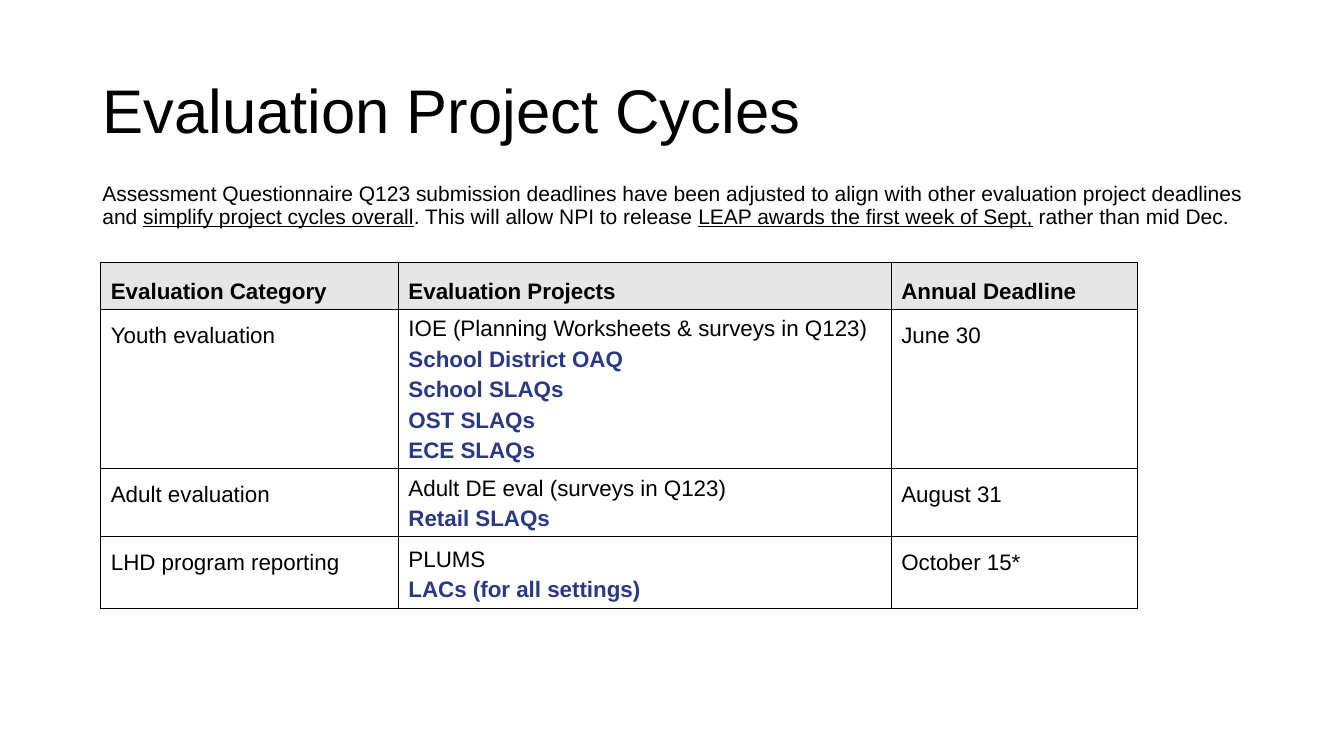
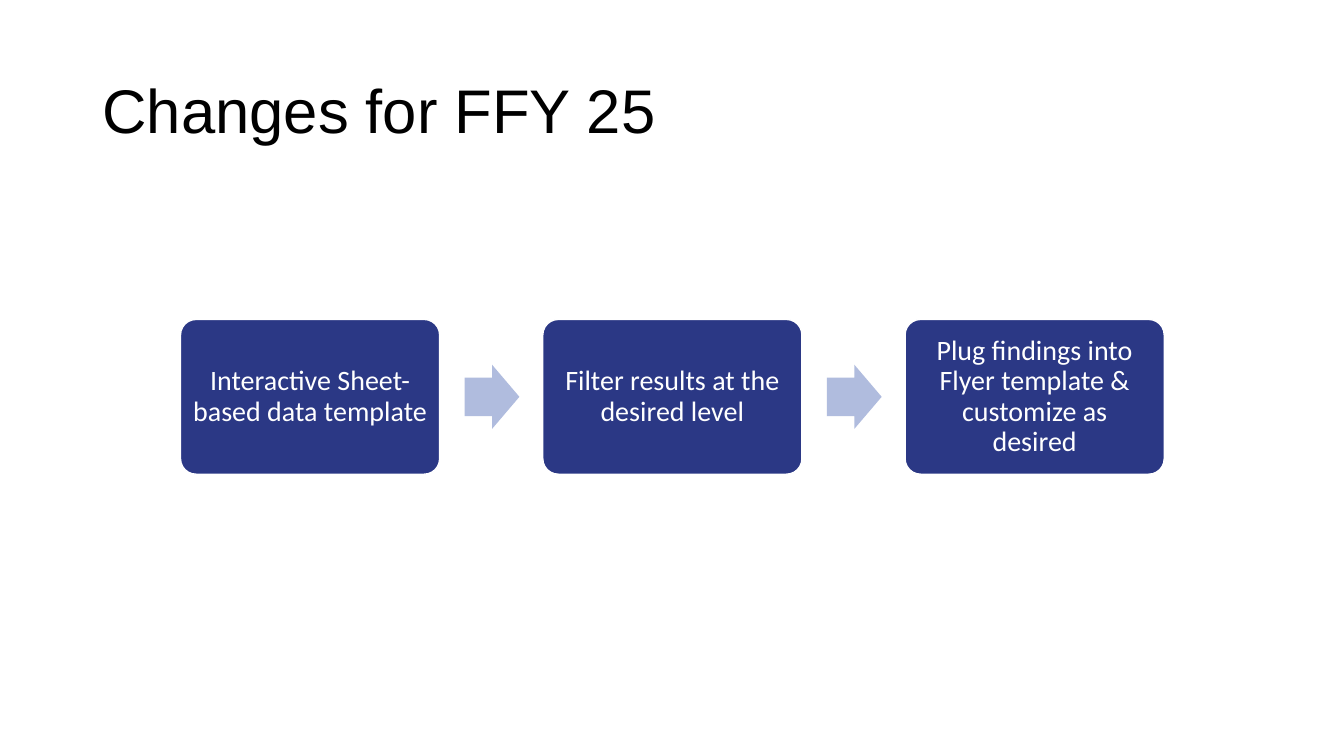
from lxml import etree
from pptx import Presentation
from pptx.dml.color import RGBColor
from pptx.enum import shapes, text
from pptx.oxml import ns
from pptx.util import Cm, Pt

BLACK = RGBColor(0x00, 0x00, 0x00)
WHITE = RGBColor(0xFF, 0xFF, 0xFF)
GREY = RGBColor(0xE7, 0xE6, 0xE6)
NAVY = RGBColor(0x2B, 0x38, 0x85)
PALE = RGBColor(0xB0, 0xBC, 0xDE)

HEADS = ["Evaluation Category", "Evaluation Projects", "Annual Deadline"]
# category, projects, deadline, leading of the first project line
CYCLES = [
    ("Youth evaluation",
     ["IOE (Planning Worksheets & surveys in Q123)", "School District OAQ",
      "School SLAQs", "OST SLAQs", "ECE SLAQs"], "June 30", 19.5),
    ("Adult evaluation",
     ["Adult DE eval (surveys in Q123)", "Retail SLAQs"], "August 31", 19.5),
    ("LHD program reporting",
     ["PLUMS", "LACs (for all settings)"], "October 15*", 21.8),
]
INTRO = [
    ("Assessment Questionnaire Q123 submission deadlines have been adjusted "
     "to align with other evaluation project deadlines and ", False),
    ("simplify project cycles overall", True),
    (". This will allow NPI to release ", False),
    ("LEAP awards the first week of Sept,", True),
    (" rather than mid Dec.", False),
]
STEPS = [
    "Interactive Sheet-based data template",
    "Filter results at the desired level",
    "Plug findings into Flyer template & customize as desired",
]


class Deck:
    sans = "Arial"
    card = "Calibri"

    def __init__(self):
        self.prs = Presentation()
        self.prs.slide_width = Cm(33.87)
        self.prs.slide_height = Cm(19.05)

    def start(self, title):
        """Add a slide with its title."""
        self.slide = self.prs.slides.add_slide(self.prs.slide_layouts[6])
        self.note([(title, False)], 2.33, 1.02, 29.21, 3.68, 44,
                  text.MSO_ANCHOR.MIDDLE)

    def style(self, run, size, color=BLACK, bold=False, name=sans):
        font = run.font
        font.name, font.size, font.bold = name, Pt(size), bold
        font.color.rgb = color

    def note(self, parts, x, y, w, h, size, anchor=text.MSO_ANCHOR.TOP):
        """Add a text box from (wording, underlined) parts."""
        box = self.slide.shapes.add_textbox(Cm(x), Cm(y), Cm(w), Cm(h))
        frame = box.text_frame
        frame.word_wrap = True
        frame.vertical_anchor = anchor
        para = frame.paragraphs[0]
        para.line_spacing = 0.9
        for words, under in parts:
            run = para.add_run()
            run.text = words
            self.style(run, size)
            if under:
                run.font.underline = True

    def shape(self, kind, x, y, w, h, fill, *adjust):
        item = self.slide.shapes.add_shape(kind, Cm(x), Cm(y), Cm(w), Cm(h))
        item.shadow.inherit = False
        item.fill.solid()
        item.fill.fore_color.rgb = fill
        item.line.fill.background()
        for i, value in enumerate(adjust):
            item.adjustments[i] = value
        return item

    def step(self, words, x, y, w, h):
        item = self.shape(shapes.MSO_SHAPE.ROUNDED_RECTANGLE,
                          x, y, w, h, NAVY, 0.1)
        item.line.color.rgb = WHITE
        item.line.width = Pt(1)
        frame = item.text_frame
        frame.text = words
        frame.word_wrap = True
        frame.vertical_anchor = text.MSO_ANCHOR.MIDDLE
        frame.margin_left = frame.margin_right = Cm(0.2)
        frame.margin_top = frame.margin_bottom = Cm(0.2)
        para = frame.paragraphs[0]
        para.alignment = text.PP_ALIGN.CENTER
        para.line_spacing = 0.9
        self.style(para.runs[0], 20, WHITE, name=self.card)

    def arrow(self, x, y, w, h):
        self.shape(shapes.MSO_SHAPE.RIGHT_ARROW, x, y, w, h, PALE, 0.6, 0.5)

    def table(self, x, y, widths, heights):
        grid = self.slide.shapes.add_table(
            len(heights), len(widths), Cm(x), Cm(y),
            Cm(sum(widths)), Cm(sum(heights))).table
        grid.first_row = grid.horz_banding = False
        for col, width in zip(grid.columns, widths):
            col.width = Cm(width)
        for row, height in zip(grid.rows, heights):
            row.height = Cm(height)
        return grid

    def cell(self, cell, lines, fill=WHITE):
        """Fill a cell with (wording, leading, colour, bold) lines."""
        cell.fill.solid()
        cell.fill.fore_color.rgb = fill
        self.edge(cell)
        frame = cell.text_frame
        frame.text = "\n".join(line[0] for line in lines)
        for para, (_, lead, color, bold) in zip(frame.paragraphs, lines):
            para.line_spacing = Pt(lead)
            self.style(para.runs[0], 16, color, bold)

    def edge(self, cell):
        """Draw a thin black border on all four sides."""
        props = cell._tc.get_or_add_tcPr()
        for i, side in enumerate("LRTB"):
            line = etree.Element(ns.qn("a:ln" + side), w=str(Pt(0.5)))
            solid = etree.SubElement(line, ns.qn("a:solidFill"))
            etree.SubElement(solid, ns.qn("a:srgbClr"), val=str(BLACK))
            props.insert(i, line)


def cycles(deck):
    deck.start("Evaluation Project Cycles")
    deck.note(INTRO, 2.33, 4.5, 29.69, 1.83, 15)
    grid = deck.table(2.54, 6.61, [7.5, 12.42, 6.2], [1.18, 4.02, 1.71, 1.8])
    for col, head in enumerate(HEADS):
        deck.cell(grid.cell(0, col), [(head, 26.2, BLACK, True)], GREY)
    for row, (group, jobs, due, lead) in enumerate(CYCLES, 1):
        deck.cell(grid.cell(row, 0), [(group, 24, BLACK, False)])
        deck.cell(grid.cell(row, 1), [(jobs[0], lead, BLACK, False)]
                  + [(job, 21.8, NAVY, True) for job in jobs[1:]])
        deck.cell(grid.cell(row, 2), [(due, 24, BLACK, False)])


def changes(deck):
    deck.start("Changes for FFY 25")
    left, top, wide, high, pitch = 4.55, 8.05, 6.53, 3.9, 9.13
    arrow_w, arrow_h = 1.38, 1.62
    for i, words in enumerate(STEPS):
        x = left + i * pitch
        if i:
            deck.arrow(x - 1.97, top + (high - arrow_h) / 2, arrow_w, arrow_h)
        deck.step(words, x, top, wide, high)


def main():
    deck = Deck()
    cycles(deck)
    changes(deck)
    deck.prs.save("out.pptx")


if __name__ == "__main__":
    main()
